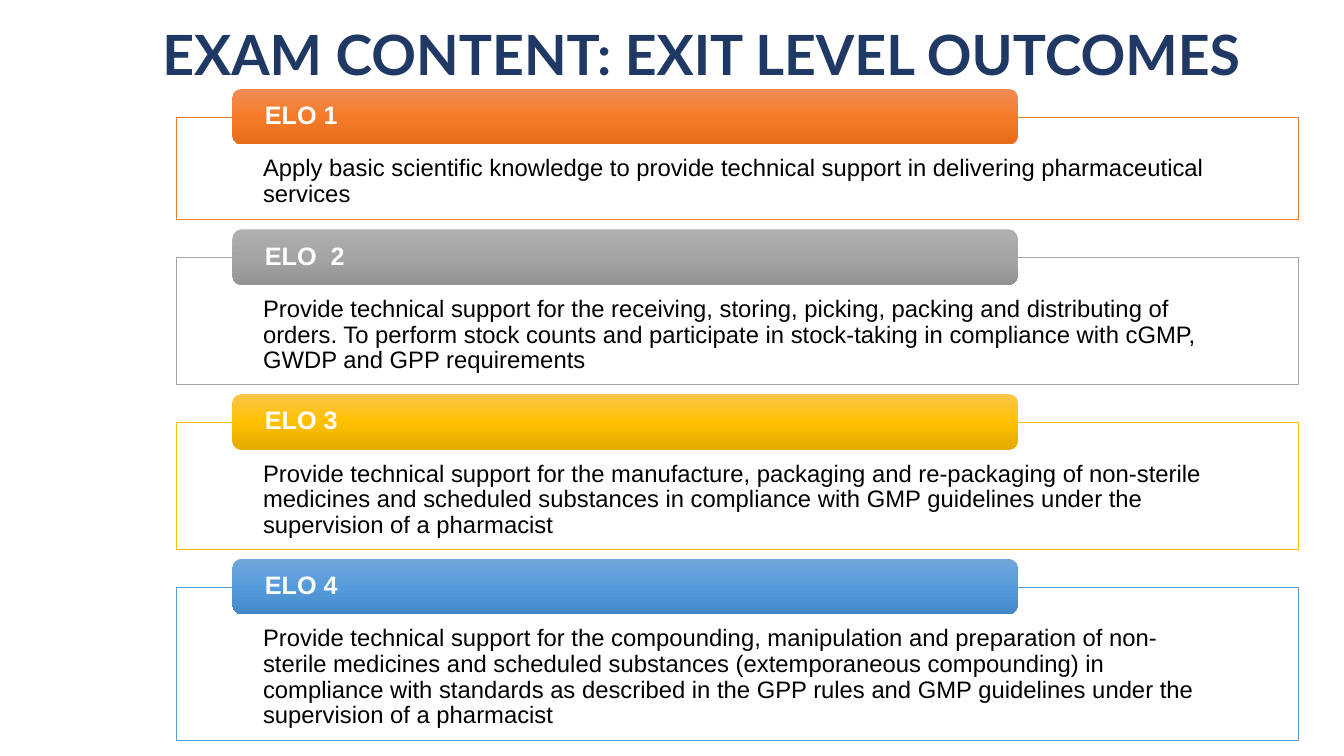
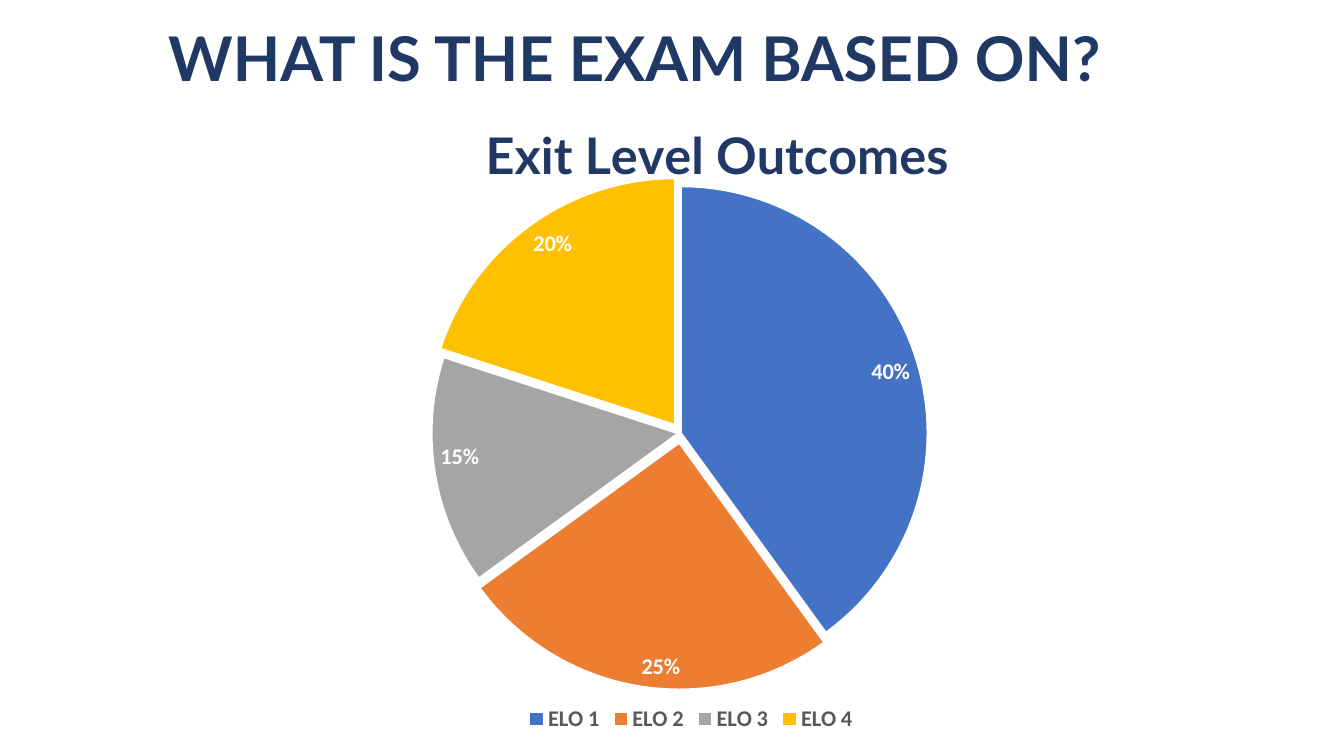
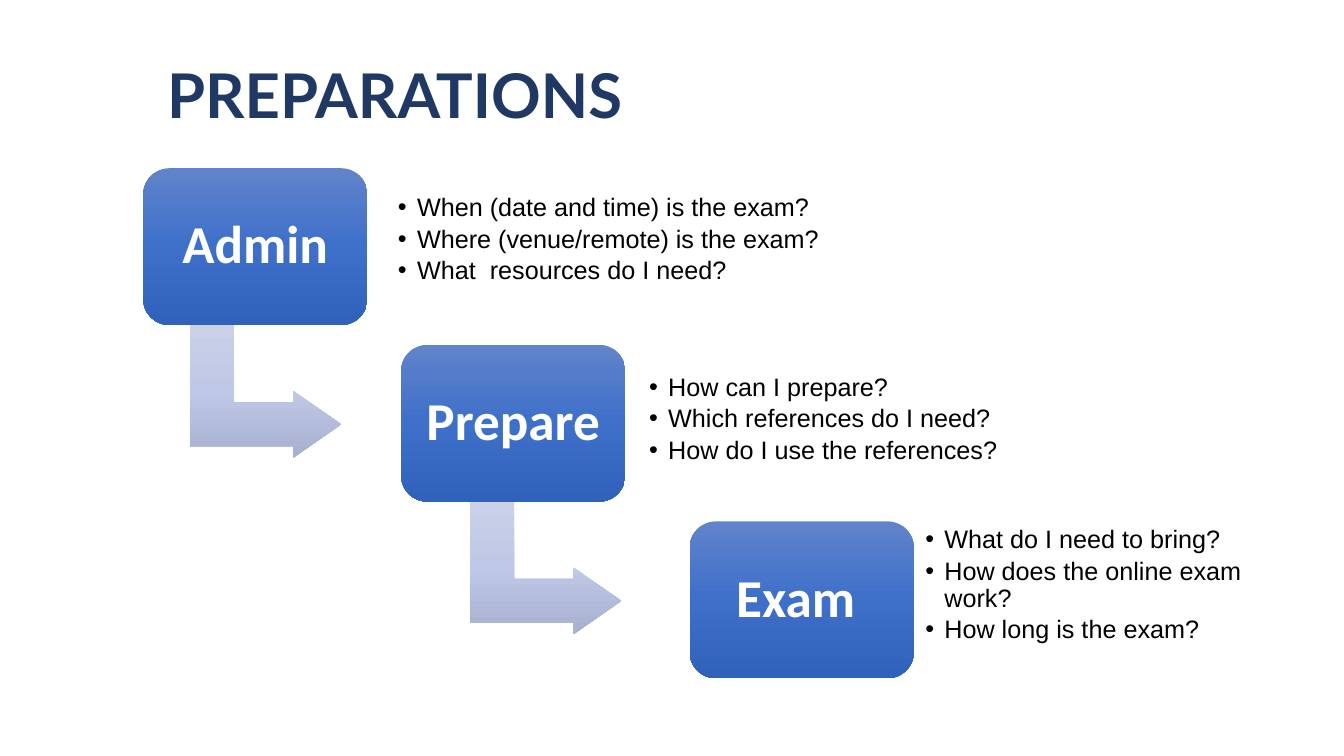
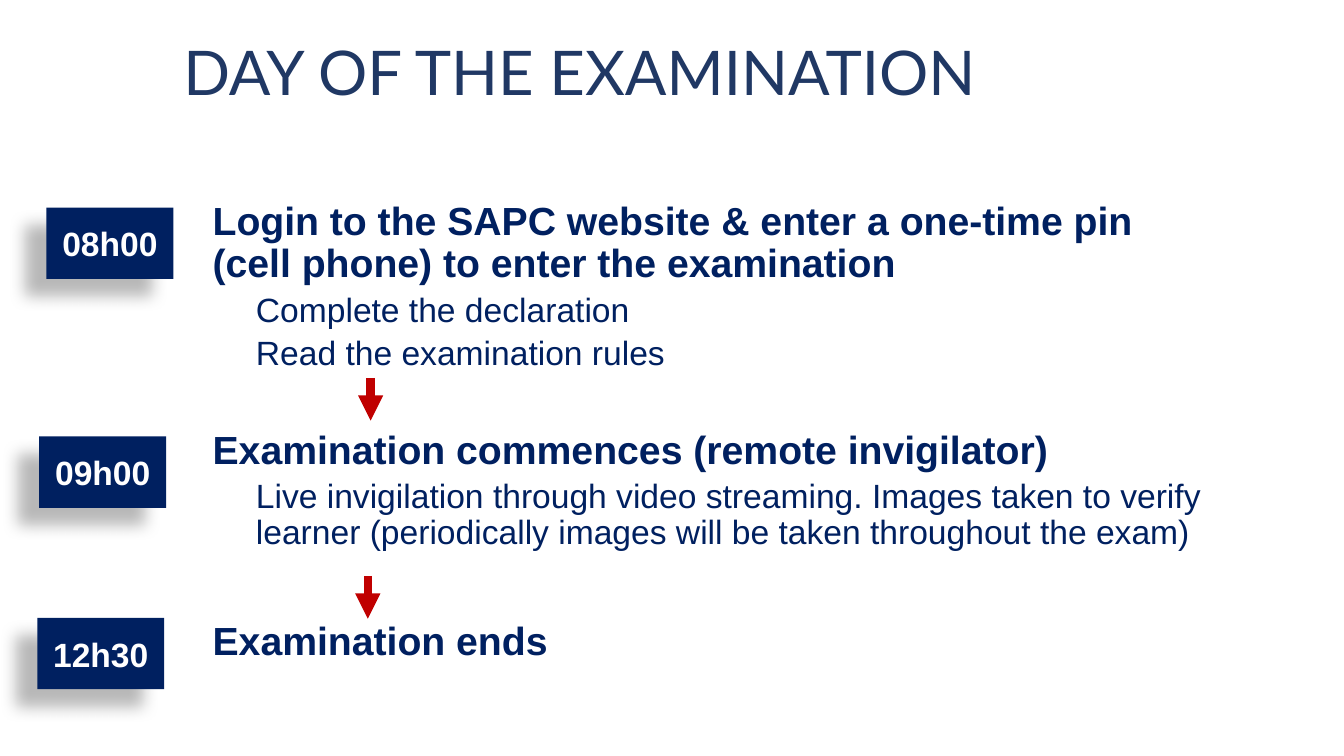
"""Build four slides on the content, weighting, preparation and timing of an exam."""
from lxml import etree
from pptx import Presentation
from pptx.chart.data import CategoryChartData
from pptx.dml.color import RGBColor
from pptx.enum.chart import XL_CHART_TYPE, XL_LABEL_POSITION, XL_LEGEND_POSITION
from pptx.enum.shapes import MSO_CONNECTOR, MSO_SHAPE
from pptx.enum.text import MSO_ANCHOR, PP_ALIGN
from pptx.oxml import parse_xml
from pptx.oxml.ns import nsdecls, qn
from pptx.util import Cm, Pt

RECT, ROUND, BENT = MSO_SHAPE.RECTANGLE, MSO_SHAPE.ROUNDED_RECTANGLE, MSO_SHAPE.BENT_UP_ARROW
TOP, MIDDLE = MSO_ANCHOR.TOP, MSO_ANCHOR.MIDDLE
LEFT, CENTER = PP_ALIGN.LEFT, PP_ALIGN.CENTER
STRAIGHT, PIE = MSO_CONNECTOR.STRAIGHT, XL_CHART_TYPE.PIE
INSIDE_END, BOTTOM = XL_LABEL_POSITION.INSIDE_END, XL_LEGEND_POSITION.BOTTOM

WHITE = RGBColor(0xFF, 0xFF, 0xFF)
BLACK = RGBColor(0x00, 0x00, 0x00)
TITLE_BLUE = RGBColor(0x20, 0x38, 0x64)
NAVY = RGBColor(0x00, 0x20, 0x60)
RED = RGBColor(0xC0, 0x00, 0x00)
GREY_TEXT = RGBColor(0x59, 0x59, 0x59)
BLUE = RGBColor(0x44, 0x72, 0xC4)
ORANGE = RGBColor(0xED, 0x7D, 0x31)
GREY = RGBColor(0xA5, 0xA5, 0xA5)
GOLD = RGBColor(0xFF, 0xC0, 0x00)
SKY = RGBColor(0x5B, 0x9B, 0xD5)
ORANGE_FADE = [RGBColor(0xF1, 0x8C, 0x57), RGBColor(0xF6, 0x7B, 0x28), RGBColor(0xE5, 0x6C, 0x19)]
GREY_FADE = [RGBColor(0xAF, 0xAF, 0xAF), GREY, RGBColor(0x93, 0x93, 0x93)]
GOLD_FADE = [RGBColor(0xFF, 0xC6, 0x4B), GOLD, RGBColor(0xE3, 0xAB, 0x00)]
SKY_FADE = [RGBColor(0x71, 0xA6, 0xDB), RGBColor(0x55, 0x9B, 0xDB), RGBColor(0x44, 0x8A, 0xCA)]
BLUE_FADE = [RGBColor(0x61, 0x83, 0xCB), RGBColor(0x3E, 0x70, 0xCA), RGBColor(0x30, 0x62, 0xBB)]
PALE_FADE = [RGBColor(0xCA, 0xD1, 0xE9), RGBColor(0xBF, 0xC8, 0xE6), RGBColor(0xA7, 0xB0, 0xCF)]

OUTCOMES = [
    ("ELO 1", "Apply basic scientific knowledge to provide technical support in delivering "
     "pharmaceutical services", 2.59, ORANGE, ORANGE_FADE),
    ("ELO  2", "Provide technical support for the receiving, storing, picking, packing and "
     "distributing of orders. To perform stock counts and participate in stock-taking in "
     "compliance with cGMP, GWDP and GPP requirements", 3.2, GREY, GREY_FADE),
    ("ELO 3", "Provide technical support for the manufacture, packaging and re-packaging of "
     "non-sterile medicines and scheduled substances in compliance with GMP guidelines under "
     "the supervision of a pharmacist", 3.2, GOLD, GOLD_FADE),
    ("ELO 4", "Provide technical support for the compounding, manipulation and preparation of "
     "non-sterile medicines and scheduled substances (extemporaneous compounding) in "
     "compliance with standards as described in the GPP rules and GMP guidelines under the "
     "supervision of a pharmacist", 3.86, SKY, SKY_FADE),
]
WEIGHTS = [("ELO 1", 40, BLUE, 0), ("ELO 2", 25, ORANGE, 4),
           ("ELO 3", 15, GREY, 1), ("ELO 4", 20, GOLD, 4)]
STEPS = [
    ("Admin", 3.61, 5.02, (9.85, 4.45, 15.8),
     ["When (date and time) is the exam?", "Where (venue/remote) is the exam?",
      "What  resources do I need?"]),
    ("Prepare", 10.11, 12.08, (16.18, 8.97, 13.49),
     ["How can I prepare?", "Which references do I need?", "How do I use the references?"]),
    ("Exam ", 17.38, None, (23.14, 13.16, 8.41),
     ["What do I need to bring?", "How does the online exam work?", "How long is the exam?"]),
]
SCHEDULE = [
    ("Login to the SAPC website & enter a one-time pin (cell phone) to enter the examination",
     ["Complete the declaration", "Read the examination rules"], 0),
    ("Examination commences (remote invigilator)",
     ["Live invigilation through video streaming. Images taken to verify learner "
      "(periodically images will be taken throughout the exam)"], 41),
    ("Examination ends", [], 50),
]
TIMES = [("08h00", 1.17, 5.23), ("09h00", 0.99, 11.0), ("12h30", 0.94, 15.57)]
ARROWS = [(9.34, 9.52), (9.27, 14.51)]

TITLE_FONT = dict(name="Lato", size=Pt(44), bold=True)
CHART_FONT = dict(name="Calibri", size=Pt(16), bold=True)


def apply(obj, values):
    for name, value in values.items():
        setattr(obj, name, value)


def set_font(font, values, color):
    apply(font, values)
    font.color.rgb = color


def arial(size, bold=False):
    return dict(name="Arial", size=Pt(size), bold=bold)


def write(tf, text, font, color, first=True, bullet=False, indent=0, **para):
    p = tf.paragraphs[0] if first else tf.add_paragraph()
    pPr = p._p.get_or_add_pPr()
    if indent:
        pPr.set("marL", str(Cm(indent)))
    if bullet:
        pPr.set("indent", str(-Cm(indent)))
        etree.SubElement(pPr, qn("a:buFont")).set("typeface", "Arial")
        etree.SubElement(pPr, qn("a:buChar")).set("char", "•")
    apply(p, {"alignment": LEFT, "line_spacing": 0.9, **para})
    r = p.add_run()
    r.text = text
    set_font(r.font, font, color)


def set_frame(s, anchor=MIDDLE, insets=(0.25, 0.13, 0.25, 0.13)):
    tf = s.text_frame
    sides = ("margin_left", "margin_top", "margin_right", "margin_bottom")
    apply(tf, dict(word_wrap=True, vertical_anchor=anchor,
                   **{side: Cm(v) for side, v in zip(sides, insets)}))
    return tf


def text_box(slide, box, **frame):
    return set_frame(slide.shapes.add_textbox(*map(Cm, box)), **frame)


def shape(slide, kind, box, fill, line=None, angle=90):
    s = slide.shapes.add_shape(kind, *map(Cm, box))
    s.shadow.inherit = False
    if isinstance(fill, RGBColor):
        s.fill.solid()
        s.fill.fore_color.rgb = fill
    else:
        stops = "".join(f'<a:gs pos="{i * 50000}"><a:srgbClr val="{c}"/></a:gs>'
                        for i, c in enumerate(fill))
        s._element.spPr.find(qn("a:prstGeom")).addnext(parse_xml(
            f'<a:gradFill {nsdecls("a")} rotWithShape="1"><a:gsLst>{stops}</a:gsLst>'
            f'<a:lin ang="{angle * 60000}" scaled="0"/></a:gradFill>'))
    if line:
        s.line.color.rgb = line
        s.line.width = Pt(0.5)
    else:
        s.line.fill.background()
    return s


def new_slide(prs, title, left, top, width=27.58, **font):
    slide = prs.slides.add_slide(prs.slide_layouts[6])
    tf = text_box(slide, (left, top, width, 2.16))
    write(tf, title, {**TITLE_FONT, **font}, TITLE_BLUE)
    return slide


def outcomes_slide(prs):
    slide = new_slide(prs, "EXAM CONTENT: EXIT LEVEL OUTCOMES", 3.84, 0.38, 29.34, size=Pt(39.6))
    top, gap = 2.95, 0.95
    for name, text, height, color, fade in OUTCOMES:
        s = shape(slide, RECT, (4.45, top, 28.27, height), WHITE, color)
        write(set_frame(s, TOP, (2.18, 0.99, 2.18, 0.33)), text, arial(17), BLACK)
        s = shape(slide, ROUND, (5.86, top - 0.71, 19.79, 1.4), fade)
        write(set_frame(s, MIDDLE, (0.75, 0, 0.75, 0)), name, arial(18, True), WHITE)
        top += height + gap


def set_layout(parent, index, x, y, w=None, h=None):
    for old in parent.findall(qn("c:layout")):
        parent.remove(old)
    values = [("xMode", "edge"), ("yMode", "edge"), ("x", x), ("y", y)]
    if w:
        values = [("layoutTarget", "inner"), *values, ("w", w), ("h", h)]
    layout = etree.Element(qn("c:layout"))
    manual = etree.SubElement(layout, qn("c:manualLayout"))
    for tag, value in values:
        etree.SubElement(manual, qn(f"c:{tag}")).set("val", str(value))
    parent.insert(index, layout)


def weights_slide(prs):
    slide = new_slide(prs, "WHAT IS THE EXAM BASED ON?", 3.99, 0.48)
    data = CategoryChartData()
    data.categories = [name for name, *_ in WEIGHTS]
    data.add_series("Series 1", [value for _, value, *_ in WEIGHTS])
    box = map(Cm, (4.55, 2.62, 25.73, 15.95))
    chart = slide.shapes.add_chart(PIE, *box, data).chart
    set_font(chart.font, dict(name="Calibri", size=Pt(10)), BLACK)

    write(chart.chart_title.text_frame, "Exit Level Outcomes", {**TITLE_FONT, "size": Pt(36)},
          TITLE_BLUE, alignment=CENTER)
    set_layout(chart.chart_title._element, 1, 0.29, 0.01)
    set_layout(chart._chartSpace.chart.plotArea, 0, 0, 0.13, 0.98, 0.78)

    chart.has_legend = True
    apply(chart.legend, dict(position=BOTTOM, include_in_layout=False))
    set_font(chart.legend.font, CHART_FONT, GREY_TEXT)

    plot = chart.plots[0]
    apply(plot, dict(vary_by_categories=True, has_data_labels=True))
    labels = plot.data_labels
    apply(labels, dict(show_percentage=True, show_value=False, position=INSIDE_END,
                       number_format="0%", number_format_is_linked=False))
    set_font(labels.font, CHART_FONT, WHITE)

    for i, (_, _, color, _) in enumerate(WEIGHTS):
        fmt = plot.series[0].points[i].format
        fmt.fill.solid()
        fmt.fill.fore_color.rgb = color
        fmt.line.color.rgb = WHITE
        fmt.line.width = Pt(1.5)
    for dPt, (*_, offset) in zip(chart._chartSpace.iter(qn("c:dPt")), WEIGHTS):
        explosion = etree.Element(qn("c:explosion"))
        explosion.set("val", str(offset))
        dPt.find(qn("c:idx")).addnext(explosion)


def preparations_slide(prs):
    slide = new_slide(prs, "PREPARATIONS", 3.96, 1.4)
    node_font = dict(name="Calibri", size=Pt(38), bold=True)
    for i, (name, left, arrow_left, (x, y, width), questions) in enumerate(STEPS):
        top = 4.24 + i * 4.45
        if arrow_left:
            s = shape(slide, BENT, (arrow_left, top + 3.71, 3.35, 3.81), PALE_FADE, angle=0)
            s.rotation = 90
            for k, value in enumerate((0.33, 0.25, 0.36)):
                s.adjustments[k] = value
        s = shape(slide, ROUND, (left, top, 5.65, 3.95), BLUE_FADE)
        write(set_frame(s, MIDDLE, (0.2,) * 4), name, node_font, WHITE, alignment=CENTER)
        tf = text_box(slide, (x, y, width, 3.2), insets=(0.18,) * 4)
        for k, question in enumerate(questions):
            write(tf, question, arial(18), BLACK, first=k == 0, bullet=True, indent=0.48,
                  space_after=Pt(3))


def schedule_slide(prs):
    slide = new_slide(prs, "DAY OF THE EXAMINATION", 4.37, 0.83, bold=False)
    tf = text_box(slide, (4.93, 4.95, 25.91, 13.97), anchor=TOP)
    for i, (head, details, before) in enumerate(SCHEDULE):
        write(tf, head, arial(28, True), NAVY, first=i == 0, indent=0.18, space_before=Pt(before))
        for detail in details:
            write(tf, detail, arial(24), NAVY, first=False, indent=1.27, space_before=Pt(5))
    for time, left, top in TIMES:
        s = shape(slide, RECT, (left, top, 3.2, 1.8), NAVY)
        s._element.spPr.find(qn("a:effectLst")).append(parse_xml(
            f'<a:outerShdw {nsdecls("a")} blurRad="{Pt(11.8)}" dist="{Pt(19.7)}" dir="8460000" '
            f'algn="ctr" rotWithShape="0"><a:srgbClr val="{BLACK}"><a:alpha val="28000"/>'
            '</a:srgbClr></a:outerShdw>'))
        write(set_frame(s), time, arial(24, True), WHITE, alignment=CENTER, line_spacing=1.0)
    for x, y in ARROWS:
        line = slide.shapes.add_connector(STRAIGHT, *map(Cm, (x, y, x, y + 1.08)))
        line.line.color.rgb = RED
        line.line.width = Pt(6)
        etree.SubElement(line.line._get_or_add_ln(), qn("a:tailEnd")).set("type", "triangle")
        etree.SubElement(line._element.spPr, qn("a:effectLst"))


def main():
    prs = Presentation()
    apply(prs, dict(slide_width=Cm(33.87), slide_height=Cm(19.05)))
    for build in (outcomes_slide, weights_slide, preparations_slide, schedule_slide):
        build(prs)
    prs.save("out.pptx")


if __name__ == "__main__":
    main()
